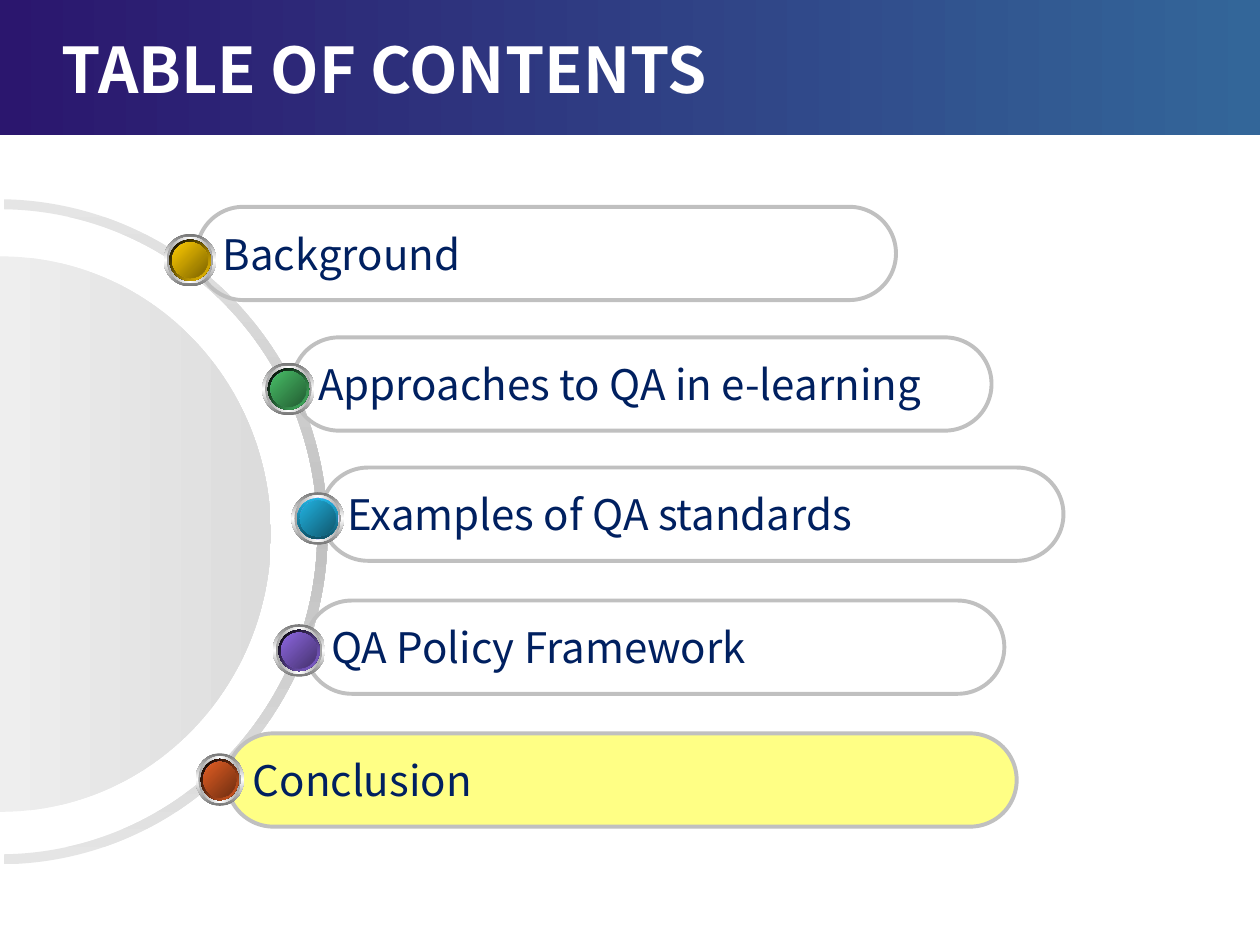
import lxml.etree
import pptx
import pptx.dml.color
import pptx.enum.shapes
import pptx.enum.text
import pptx.oxml.ns
import pptx.util

Pt = pptx.util.Pt
qn = pptx.oxml.ns.qn
MSO_SHAPE = pptx.enum.shapes.MSO_SHAPE

COLORS = {
    "indigo": "2B166E", "steel": "336699", "navy": "002060", "white": "FFFFFF",
    "black": "000000", "silver": "C0C0C0", "pale": "E5E5E5", "yellow": "FFFF85",
    "disc left": "EEEEEE", "disc right": "DCDCDC", "rim": "767676", "bezel": "A2A2A2",
    "lilac": "9999FF", "dusk": "7575C3",
    "gold": "FFCC00", "dark gold": "7C6300", "green": "48BE67", "dark green": "235C32",
    "blue": "21B3E1", "dark blue": "10576D", "deep blue": "0F5368",
    "violet": "8D67E1", "dark violet": "45326D", "orange": "E35E23", "dark orange": "6E2E11",
}


def write_text(shape, text, size=24, color="navy", bold=False, wrap=False):
    frame = shape.text_frame
    frame.word_wrap = wrap
    frame.vertical_anchor = pptx.enum.text.MSO_ANCHOR.MIDDLE
    paragraph = frame.paragraphs[0]
    paragraph.alignment = pptx.enum.text.PP_ALIGN.LEFT
    run = paragraph.add_run()
    run.text = text
    run.font.name = "Noto Sans CJK KR"
    run.font.size = Pt(size)
    run.font.bold = bold
    run.font.color.rgb = pptx.dml.color.RGBColor.from_string(COLORS[color])


def fill_gradient(shape, names, angle):
    shape.shadow.inherit = False
    shape.line.fill.background()
    shape.fill.gradient()
    shape.fill.gradient_angle = (360 - angle) % 360
    stops = shape.element.spPr.find(".//" + qn("a:gsLst"))
    for stop in list(stops):
        stops.remove(stop)
    for index, name in enumerate(names):
        position = str(100000 * index // (len(names) - 1))
        stop = lxml.etree.SubElement(stops, qn("a:gs"), pos=position)
        lxml.etree.SubElement(stop, qn("a:srgbClr"), val=COLORS[name])


presentation = pptx.Presentation()
presentation.slide_width = Pt(720)
presentation.slide_height = Pt(540)
slide = presentation.slides.add_slide(presentation.slide_layouts[5])
shapes = slide.shapes

banner = shapes.add_shape(MSO_SHAPE.RECTANGLE, 0, 0, Pt(720), Pt(77))
fill_gradient(banner, ["indigo", "steel"], 0)

title = shapes.title
title.left, title.top, title.width, title.height = Pt(28), Pt(16.5), Pt(486), Pt(44.6)
write_text(title, "TABLE OF CONTENTS", size=36, color="white", bold=True, wrap=True)

ring = [(2.2, 119.6), (101.5, 121), (181.4, 203), (181.4, 303.9),
        (181.4, 404.8), (101.5, 486.8), (2.2, 488.2), (2.2, 493.9),
        (104.4, 492.5), (187.2, 407.7), (187.2, 303.9),
        (187.2, 200.1), (104.4, 115.9), (2.2, 113.9)]
disc = [(0, 146.5), (85.7, 146.5), (154.8, 217.6), (154.8, 305.2),
        (154.8, 392.8), (85.7, 463.9), (0, 463.9)]
for points, curve_starts, names, angle in [
    (ring, [0, 3, 7, 10], ["pale", "silver", "pale"], 90),
    (disc, [0, 3], ["disc left", "disc right"], 0),
]:
    outline = [(Pt(x), Pt(y)) for x, y in points]
    builder = shapes.build_freeform(*outline[0], scale=1.0)
    builder.add_line_segments(outline[1:], close=False)
    half_round = builder.convert_to_shape()
    path_element = half_round.element.spPr.find(".//" + qn("a:path"))
    segments = path_element.findall(qn("a:lnTo"))
    for start in curve_starts:
        curve = lxml.etree.Element(qn("a:cubicBezTo"))
        segments[start].addprevious(curve)
        for segment in segments[start:start + 3]:
            curve.append(segment[0])
            path_element.remove(segment)
    lxml.etree.SubElement(path_element, qn("a:close"))
    fill_gradient(half_round, names, angle)

items = [
    ("Background", 112.4, 118.2, 399.6, None, 108.6, 148.7, 1, "gold", "black", "gold", 45),
    ("Approaches to QA in e-learning", 167, 192.8, 399.6, None,
     164.8, 222.3, 1, "green", "black", "green", 45),
    ("Examples of QA standards", 183.6, 267.2, 424.1, None,
     181.6, 296.3, 1, "blue", "blue", "deep blue", 90),
    ("QA Policy Framework", 174.3, 343.2, 399.6, None,
     170.9, 371.7, 1, "violet", "black", "violet", 45),
    ("Conclusion", 129.6, 419.1, 451.4, "yellow",
     125.6, 445.5, 0.92, "orange", "black", "orange", 45),
]
for (text, left, top, width, fill, center_x, center_y, stretch,
     hue, socket_start, socket_end, socket_angle) in items:
    pill = shapes.add_shape(MSO_SHAPE.ROUNDED_RECTANGLE, Pt(left), Pt(top), Pt(width), Pt(53.3))
    pill.adjustments[0] = 0.5
    pill.shadow.inherit = False
    if fill:
        pill.fill.solid()
        pill.fill.fore_color.rgb = pptx.dml.color.RGBColor.from_string(COLORS[fill])
    else:
        pill.fill.background()
    pill.line.color.rgb = pptx.dml.color.RGBColor.from_string(COLORS["silver"])
    pill.line.width = Pt(2.25)
    write_text(pill, text)

    for size, names, angle in [
        (30, ["rim", "white", "rim"], 90),
        (26.6, ["bezel", "white", "bezel"], 0),
        (23.6, ["white", "lilac", "white"], 45),
        (23.6, [socket_start, socket_end], socket_angle),
        (20.4, ["dusk", "lilac", "dusk"], 315),
        (20.4, [hue, "dark " + hue], 45),
    ]:
        knob_width = size * stretch
        knob = shapes.add_shape(MSO_SHAPE.OVAL, Pt(center_x - knob_width / 2),
                                Pt(center_y - size / 2), Pt(knob_width), Pt(size))
        fill_gradient(knob, names, angle)

title.element.getparent().append(title.element)
presentation.save("out.pptx")
